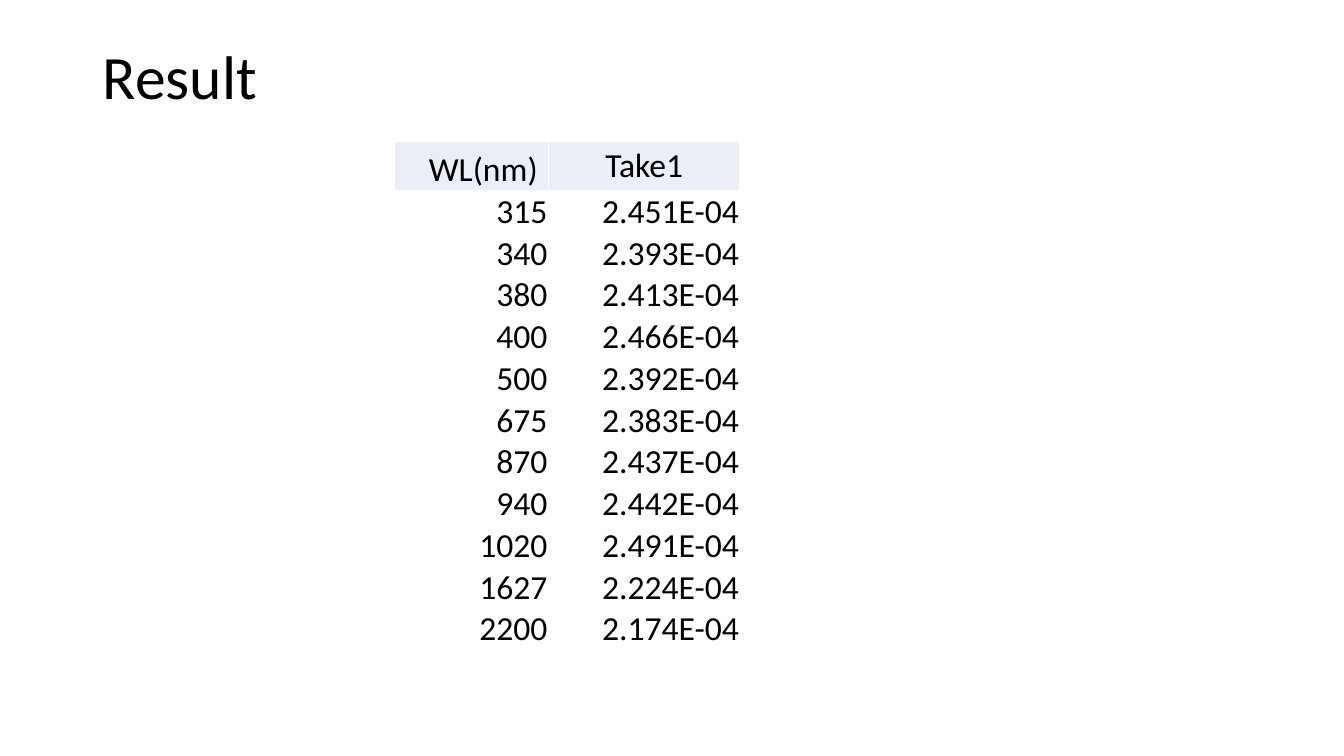
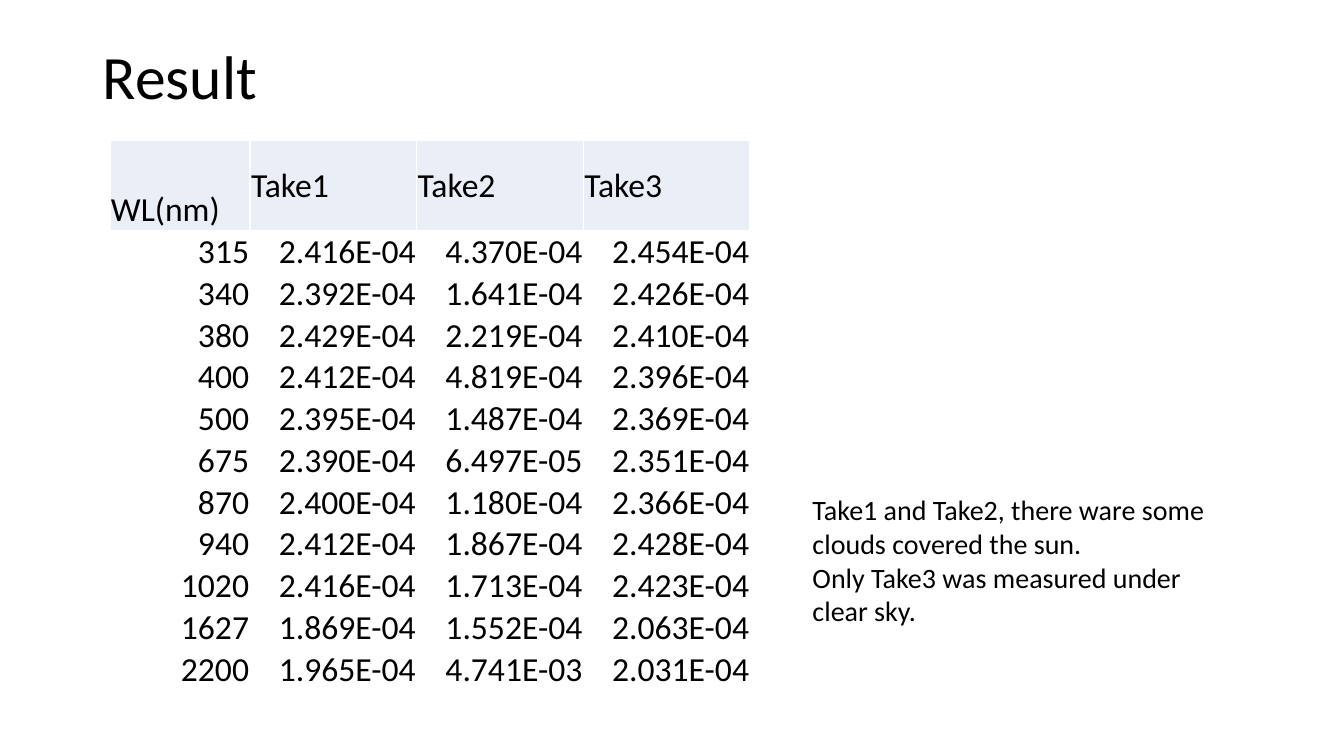
"""Build two result slides with tables of readings by wavelength."""
from pptx import Presentation
from pptx.dml.color import RGBColor
from pptx.enum.text import MSO_ANCHOR, PP_ALIGN
from pptx.util import Inches, Pt

MIDDLE, TOP = MSO_ANCHOR.MIDDLE, MSO_ANCHOR.TOP
LEFT, CENTER, RIGHT = PP_ALIGN.LEFT, PP_ALIGN.CENTER, PP_ALIGN.RIGHT
COLORS = {"text": "000000", "head": "EAEFF7"}
FONT = "Calibri"
BODY = 4.56
WAVES = [315, 340, 380, 400, 500, 675, 870, 940, 1020, 1627, 2200]
NOTE = ["Take1 and Take2, there ware some clouds covered the sun.",
        "Only Take3 was measured under clear sky."]

PAGES = [
    {"at": (3.91, 1.4), "width": 3.43, "first": 1.53, "head": 0.49,
     "align": CENTER, "note": [],
     "takes": [
         ["2.451E-04", "2.393E-04", "2.413E-04", "2.466E-04", "2.392E-04", "2.383E-04",
          "2.437E-04", "2.442E-04", "2.491E-04", "2.224E-04", "2.174E-04"]]},
    {"at": (1.09, 1.39), "width": 6.35, "first": 1.39, "head": 0.9,
     "align": LEFT, "note": NOTE,
     "takes": [
         ["2.416E-04", "2.392E-04", "2.429E-04", "2.412E-04", "2.395E-04", "2.390E-04",
          "2.400E-04", "2.412E-04", "2.416E-04", "1.869E-04", "1.965E-04"],
         ["4.370E-04", "1.641E-04", "2.219E-04", "4.819E-04", "1.487E-04", "6.497E-05",
          "1.180E-04", "1.867E-04", "1.713E-04", "1.552E-04", "4.741E-03"],
         ["2.454E-04", "2.426E-04", "2.410E-04", "2.396E-04", "2.369E-04", "2.351E-04",
          "2.366E-04", "2.428E-04", "2.423E-04", "2.063E-04", "2.031E-04"]]},
]


def write(para, text, size, align=LEFT):
    para.alignment = align
    run = para.add_run()
    run.text = text
    run.font.name = FONT
    run.font.size = Pt(size)
    run.font.color.rgb = RGBColor.from_string(COLORS["text"])


def add_text(slide, box, lines, size, anchor=TOP, space=1.0):
    frame = slide.shapes.add_textbox(*map(Inches, box)).text_frame
    frame.word_wrap = True
    frame.vertical_anchor = anchor
    for i, line in enumerate(lines):
        para = frame.add_paragraph() if i else frame.paragraphs[0]
        para.line_spacing = space
        write(para, line, size)


deck = Presentation()
deck.slide_width, deck.slide_height = Inches(13.33), Inches(7.5)

for page in PAGES:
    slide = deck.slides.add_slide(deck.slide_layouts[6])
    add_text(slide, (0.92, 0.4, 11.5, 0.77), ["Result"], 44, MIDDLE, 0.9)

    takes = page["takes"]
    head = ["　WL(nm)"] + [f"Take{n}" for n in range(1, len(takes) + 1)]
    rows = [head] + [[str(wave), *vals] for wave, *vals in zip(WAVES, *takes)]
    size = (page["width"], page["head"] + BODY)
    table = slide.shapes.add_table(len(rows), len(head),
                                   *map(Inches, page["at"] + size)).table
    table.first_row = table.horz_banding = False
    rest = (page["width"] - page["first"]) / len(takes)
    for c, col in enumerate(table.columns):
        col.width = Inches(rest if c else page["first"])
    for r, row in enumerate(rows):
        table.rows[r].height = Inches(BODY / len(WAVES) if r else page["head"])
        for c, text in enumerate(row):
            cell = table.cell(r, c)
            cell.vertical_anchor = MIDDLE
            cell.margin_left = cell.margin_right = cell.margin_top = Inches(0.01)
            cell.margin_bottom = 0
            if r == 0:
                cell.fill.solid()
                cell.fill.fore_color.rgb = RGBColor.from_string(COLORS["head"])
                align = page["align"] if c else LEFT
            else:
                cell.fill.background()
                align = RIGHT
            write(cell.text_frame.paragraphs[0], text, 24, align)

    if page["note"]:
        add_text(slide, (7.96, 4.84, 4.45, 1.45), page["note"], 20)

deck.save("out.pptx")
